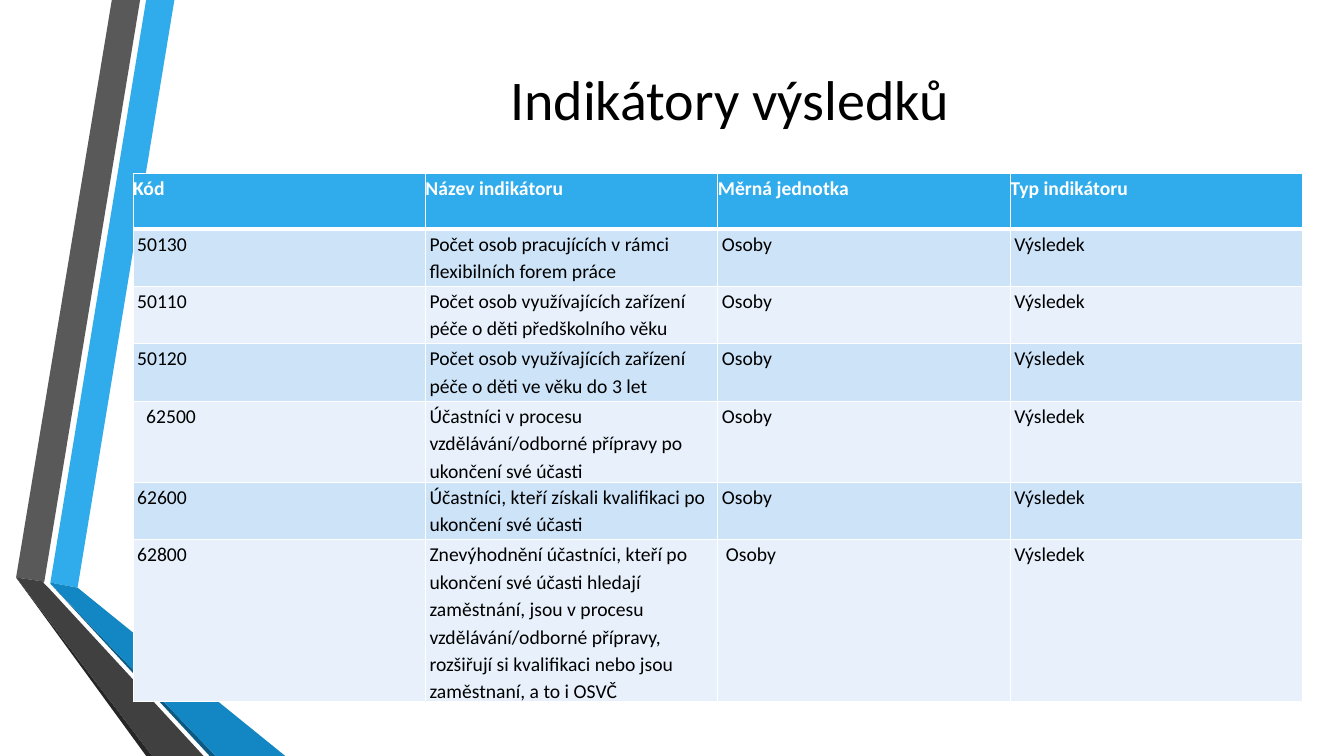
from lxml import etree
from pptx import Presentation
from pptx.dml.color import RGBColor
from pptx.enum.text import MSO_ANCHOR, PP_ALIGN
from pptx.oxml.ns import qn
from pptx.util import Inches, Pt

CENTER, JUSTIFY, LEFT = PP_ALIGN.CENTER, PP_ALIGN.JUSTIFY, PP_ALIGN.LEFT
MIDDLE = MSO_ANCHOR.MIDDLE
FONT = "Calibri"
BLUE, WHITE, BLACK = "30ACEC", "FFFFFF", "000000"
BAND_FILLS = ["CDE3F8", "E8F1FB"]


def color(hex_value):
    return RGBColor.from_string(hex_value)


def write_text(text_frame, text, size=14, hex_value=BLACK, bold=False, align=LEFT,
               line_spacing=1.0, before=0, after=0, indent=0):
    """Fill the first paragraph of a text frame and format it."""
    text_frame.word_wrap = True
    paragraph = text_frame.paragraphs[0]
    paragraph.alignment = align
    paragraph.line_spacing = line_spacing
    paragraph.space_before, paragraph.space_after = Pt(before), Pt(after)
    properties = paragraph._p.get_or_add_pPr()
    properties.set("marL", str(Inches(indent)))
    properties.set("indent", "0")
    run = paragraph.add_run()
    run.text = text
    run.font.name, run.font.size, run.font.bold = FONT, Pt(size), bold
    run.font.color.rgb = color(hex_value)


presentation = Presentation()
presentation.slide_width, presentation.slide_height = Inches(13.33), Inches(7.5)
slide = presentation.slides.add_slide(presentation.slide_layouts[6])

# Folded ribbons along the left edge
ribbons = [
    (BLUE, [(0.5, 5.78), (0.77, 5.83), (1.73, 0), (1.45, 0)]),
    ("595959", [(1.39, 0), (1.11, 0), (0.16, 5.73), (0.44, 5.77)]),
    ("262626", [(0.16, 5.73), (1.45, 7.5), (1.51, 7.5)]),
    ("0C5A82", [(0.5, 5.79), (2.08, 7.5), (2.14, 7.5)]),
    ("1287C3", [(0.5, 5.78), (0.5, 5.79), (2.14, 7.5), (2.83, 7.5), (0.77, 5.83)]),
    ("404040", [(2.02, 7.5), (0.48, 5.83), (0.43, 5.78), (0.44, 5.77), (0.16, 5.73),
                (1.51, 7.5)]),
]
for fill, corners in ribbons:
    points = [(Inches(x), Inches(y)) for x, y in corners]
    builder = slide.shapes.build_freeform(*points[0])
    builder.add_line_segments(points[1:], close=True)
    ribbon = builder.convert_to_shape()
    ribbon.shadow.inherit = False
    ribbon.fill.solid()
    ribbon.fill.fore_color.rgb = color(fill)
    ribbon.line.fill.background()

title = slide.shapes.add_textbox(Inches(1.76), Inches(0.53), Inches(10.96), Inches(0.89))
title.text_frame.vertical_anchor = MIDDLE
write_text(title.text_frame, "Indikátory výsledků", size=40, align=CENTER)

# Indicator table
header = ["Kód", "Název indikátoru", "Měrná jednotka", "Typ indikátoru"]
indicators = [
    ("50130", "Počet osob pracujících v rámci flexibilních forem práce"),
    ("50110", "Počet osob využívajících zařízení péče o děti předškolního věku"),
    ("50120", "Počet osob využívajících zařízení péče o děti ve věku do 3 let"),
    ("62500", "Účastníci v procesu vzdělávání/odborné přípravy po ukončení své účasti"),
    ("62600", "Účastníci, kteří získali kvalifikaci po ukončení své účasti"),
    ("62800", "Znevýhodnění účastníci, kteří po ukončení své účasti hledají zaměstnání, "
              "jsou v procesu vzdělávání/odborné přípravy, rozšiřují si kvalifikaci "
              "nebo jsou zaměstnaní, a to i OSVČ"),
]
rows = [header] + [[code, name, "Osoby", "Výsledek"] for code, name in indicators]
row_heights = [0.55] + [0.57] * 5 + [1.42]
wider_indents = {(4, 0): 0.13, (6, 2): 0.08}

table = slide.shapes.add_table(len(rows), len(header), Inches(1.32), Inches(1.72),
                               Inches(11.6), Inches(sum(row_heights))).table
table.horz_banding = False
for column in table.columns:
    column.width = Inches(2.9)

for row_index, (values, height) in enumerate(zip(rows, row_heights)):
    table.rows[row_index].height = Inches(height)
    is_header = row_index == 0
    for column_index, value in enumerate(values):
        cell = table.cell(row_index, column_index)
        cell.margin_left = cell.margin_right = cell.margin_top = cell.margin_bottom = 0
        if is_header:
            write_text(cell.text_frame, value, hex_value=WHITE, bold=True, align=JUSTIFY,
                       line_spacing=1.15, after=6)
        else:
            write_text(cell.text_frame, value, line_spacing=1.15, before=3, after=3,
                       indent=wider_indents.get((row_index, column_index), 0.04))

        cell_properties = cell._tc.get_or_add_tcPr()
        for side in ("lnL", "lnR", "lnT", "lnB"):
            under_header = (row_index, side) in [(0, "lnB"), (1, "lnT")]
            border = etree.SubElement(cell_properties, qn(f"a:{side}"),
                                      w=str(Pt(3 if under_header else 1)))
            border_fill = etree.SubElement(border, qn("a:solidFill"))
            etree.SubElement(border_fill, qn("a:srgbClr"), val=WHITE)
        cell.fill.solid()
        cell.fill.fore_color.rgb = color(BLUE if is_header else BAND_FILLS[(row_index - 1) % 2])

presentation.save("out.pptx")
